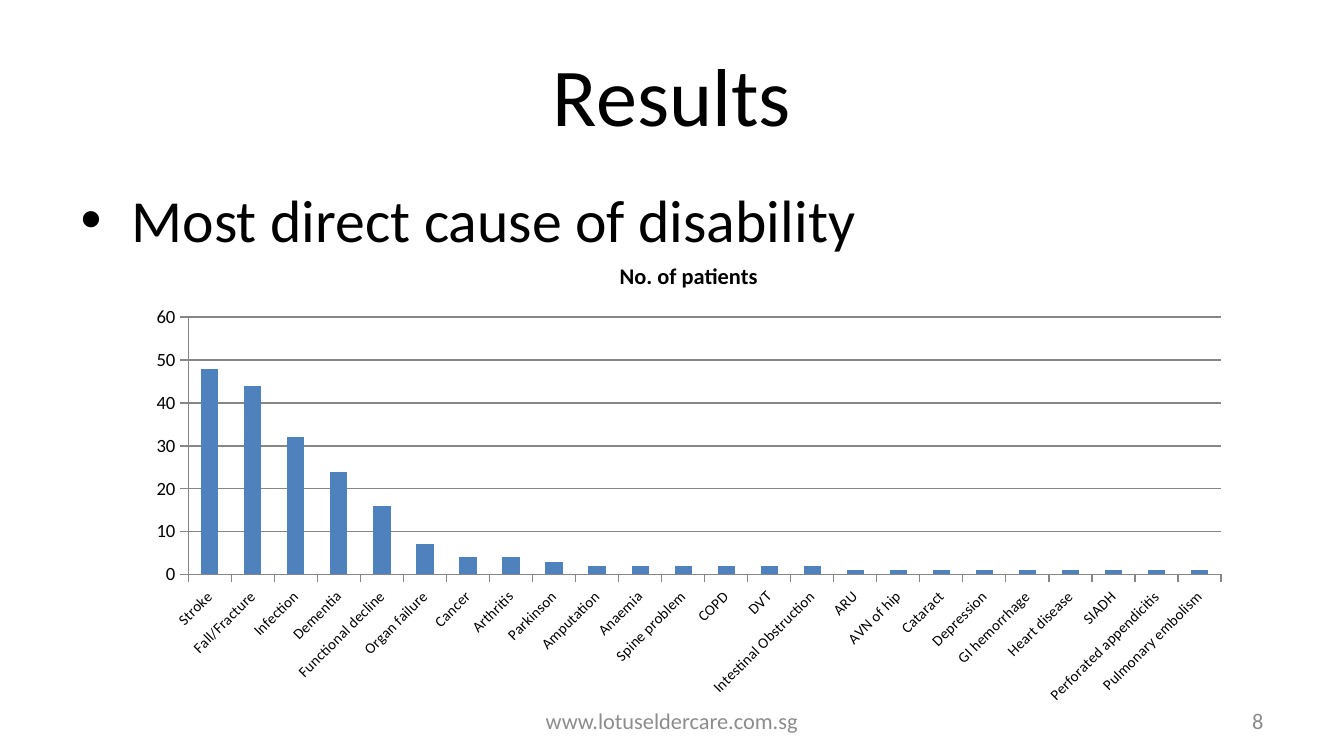
from dataclasses import dataclass

from pptx import Presentation
from pptx import util as u
from pptx.chart.data import CategoryChartData
from pptx.dml.color import RGBColor
from pptx.enum import chart as ch, text
from pptx.oxml import parse_xml
from pptx.oxml.ns import nsdecls

WIDTH = 10
HEIGHT = WIDTH * 9 / 16
MARGIN = 0.05 * WIDTH
CONTENT_WIDTH = WIDTH - 2 * MARGIN


@dataclass(frozen=True)
class Theme:
    font: str = "Calibri"
    ink: RGBColor = RGBColor(0, 0, 0)
    muted: RGBColor = RGBColor(0x8C, 0x8C, 0x8C)
    bar: RGBColor = RGBColor(0x4F, 0x81, 0xBD)
    rule: RGBColor = RGBColor(0x86, 0x86, 0x86)
    title: int = 44
    body: int = 32
    chart_title: int = 12
    values: int = 10
    categories: int = 8
    footer: int = 12


THEME = Theme()

CAUSES = {
    "Stroke": 48, "Fall/Fracture": 44, "Infection": 32, "Dementia": 24,
    "Functional decline": 16, "Organ failure": 7, "Cancer": 4,
    "Arthritis": 4, "Parkinson": 3, "Amputation": 2, "Anaemia": 2,
    "Spine problem": 2, "COPD": 2, "DVT": 2, "Intestinal Obstruction": 2,
    "ARU": 1, "AVN of hip": 1, "Cataract": 1, "Depression": 1,
    "GI hemorrhage": 1, "Heart disease": 1, "SIADH": 1,
    "Perforated appendicitis": 1, "Pulmonary embolism": 1,
}


def style_font(font, size, color=THEME.ink, bold=False):
    font.name, font.size, font.bold = THEME.font, u.Pt(size), bold
    font.color.rgb = color


def write(shape, words, size, align, anchor, color=THEME.ink):
    frame = shape.text_frame
    frame.word_wrap = True
    frame.vertical_anchor = anchor
    frame.text = words
    paragraph = frame.paragraphs[0]
    paragraph.alignment = align
    style_font(paragraph.runs[0].font, size, color)
    return paragraph


def place(shape, left, top, width, height):
    shape.left, shape.top = u.Inches(left), u.Inches(top)
    shape.width, shape.height = u.Inches(width), u.Inches(height)


def add_heading(slide, words):
    title = slide.shapes.title
    place(title, MARGIN, 0.23, CONTENT_WIDTH, 0.94)
    write(title, words, THEME.title, text.PP_ALIGN.CENTER, text.MSO_ANCHOR.MIDDLE)


def add_bullet(slide, words):
    body = slide.placeholders[1]
    place(body, MARGIN, 1.31, CONTENT_WIDTH, 3.71)
    point = write(body, words, THEME.body, text.PP_ALIGN.LEFT, text.MSO_ANCHOR.TOP)
    properties = point._p.get_or_add_pPr()
    properties.set("marL", str(u.Inches(0.38)))
    properties.set("indent", str(u.Inches(-0.38)))
    properties.append(parse_xml(f'<a:buChar {nsdecls("a")} char="•"/>'))
    point.space_before = u.Pt(0)


def add_footer(slide, words, left, width, align):
    box = slide.shapes.add_textbox(
        u.Inches(left), u.Inches(5.21), u.Inches(width), u.Inches(0.3))
    write(box, words, THEME.footer, align, text.MSO_ANCHOR.MIDDLE, THEME.muted)


def style_axis(axis, size):
    style_font(axis.tick_labels.font, size)
    axis.major_tick_mark = ch.XL_TICK_MARK.OUTSIDE
    axis.minor_tick_mark = ch.XL_TICK_MARK.NONE
    axis.format.line.color.rgb = THEME.rule
    axis.format.line.width = u.Pt(0.75)


def add_cause_chart(slide, series_name):
    data = CategoryChartData(number_format="General")
    data.categories = list(CAUSES)
    data.add_series(series_name, list(CAUSES.values()))
    chart = slide.shapes.add_chart(
        ch.XL_CHART_TYPE.COLUMN_CLUSTERED, u.Inches(1), u.Inches(1.79),
        u.Inches(8.25), u.Inches(3.52), data).chart
    style_font(chart.font, THEME.values)
    chart.has_legend = False
    chart.has_title = True
    heading = chart.chart_title.text_frame
    heading.text = series_name
    style_font(heading.paragraphs[0].runs[0].font, THEME.chart_title, bold=True)

    plot = chart.plots[0]
    plot.gap_width = 150
    plot.vary_by_categories = False
    fill = plot.series[0].format.fill
    fill.solid()
    fill.fore_color.rgb = THEME.bar

    causes, counts = chart.category_axis, chart.value_axis
    style_axis(causes, THEME.categories)
    style_axis(counts, THEME.values)
    causes._element.txPr.bodyPr.set("rot", str(-45 * 60000))
    counts.minimum_scale, counts.maximum_scale, counts.major_unit = 0, 60, 10
    counts.has_major_gridlines = True
    grid = counts.major_gridlines.format.line
    grid.color.rgb = THEME.rule
    grid.width = u.Pt(0.75)


def main():
    deck = Presentation()
    deck.slide_width, deck.slide_height = u.Inches(WIDTH), u.Inches(HEIGHT)
    slide = deck.slides.add_slide(deck.slide_layouts[1])
    add_heading(slide, "Results")
    add_bullet(slide, "Most direct cause of disability")
    add_cause_chart(slide, "No. of patients")
    address_width, number_width = 3.17, 2.33
    add_footer(slide, "www.lotuseldercare.com.sg", (WIDTH - address_width) / 2,
               address_width, text.PP_ALIGN.CENTER)
    add_footer(slide, "8", WIDTH - MARGIN - number_width,
               number_width, text.PP_ALIGN.RIGHT)
    deck.save("out.pptx")


if __name__ == "__main__":
    main()
